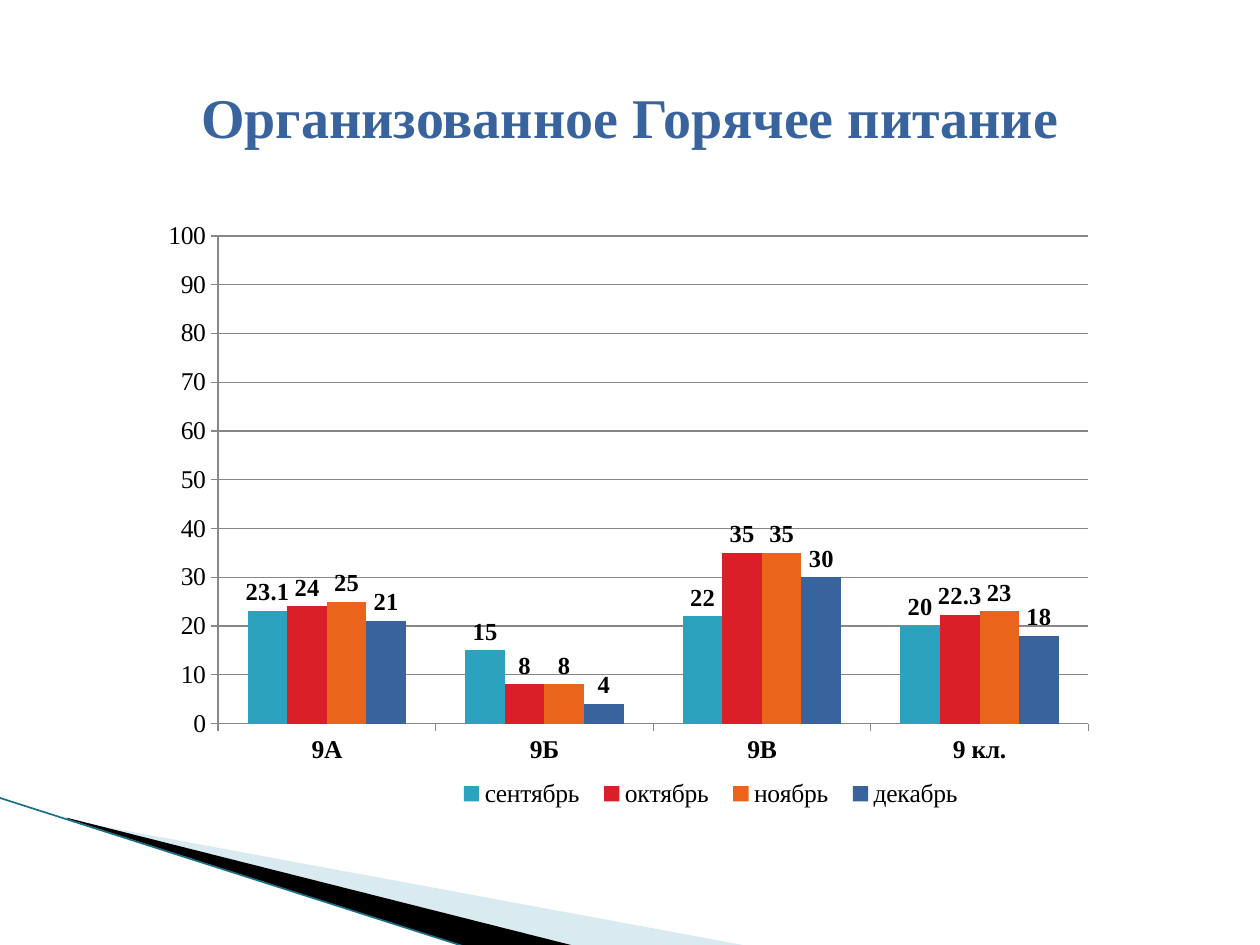
from lxml.etree import SubElement
from pptx import Presentation
from pptx.chart.data import CategoryChartData as ChartData
from pptx.dml.color import RGBColor as RGB
from pptx.enum.chart import XL_CHART_TYPE as Kind, XL_LABEL_POSITION as Spot
from pptx.enum.chart import XL_LEGEND_POSITION as Side, XL_TICK_MARK as Tick
from pptx.enum.shapes import MSO_CONNECTOR as Link
from pptx.enum.text import MSO_ANCHOR as Anchor, PP_ALIGN as Align
from pptx.oxml import parse_xml
from pptx.oxml.ns import nsdecls, qn
from pptx.util import Inches, Pt

TITLE = "Организованное Горячее питание"
CLASSES = ["9А", "9Б", "9В", "9 кл."]
MONTHS = {
    "сентябрь": ([23.1, 15, 22, 20], "2DA2BF"),
    "октябрь": ([24, 8, 35, 22.3], "DA1F28"),
    "ноябрь": ([25, 8, 35, 23], "EB641B"),
    "декабрь": ([21, 4, 30, 18], "39639D"),
}
THEME = {
    "font": "Times New Roman", "title": "39639D", "text": "000000",
    "grid": "878787", "edge": "1B6F84",
    "head": 32, "axis": 14.6, "label": 14,
}
# points, colour, opacity in percent
WEDGES = [
    ([(0.55, 6.51), (5.95, 7.51), (4.56, 7.51), (0.55, 6.5)], "A0CBDC", 40),
    ([(0.53, 6.49), (4.57, 7.51), (3.72, 7.52), (0.54, 6.5)], "000000", 100),
]
EDGE = [(-0.01, 6.33), (3.71, 7.52)]
WIDE, HIGH = 10, 7.5
TITLE_BOX = (0.05, 0.04, 0.9, 1 / 6)
CHART_BOX = (0.12, 0.224, 0.759, 0.645)
PLOT = (0.07, 0.04, 0.91, 0.8)
LEGEND = (0.31, 0.92, 0.55, 0.07)


def place(box):
    """Turn shares of the slide into lengths."""
    return [Inches(part * size) for part, size in zip(box, (WIDE, HIGH) * 2)]


def style(font, size, color="text", bold=False):
    values = {"name": THEME["font"], "size": Pt(size), "bold": bold}
    for key, value in values.items():
        setattr(font, key, value)
    font.color.rgb = RGB.from_string(THEME[color])


def set_layout(node, index, box, inner=False):
    """Fix a chart part at shares of the chart's size."""
    for old in node.findall(qn("c:layout")):
        node.remove(old)
    layout = parse_xml(f"<c:layout {nsdecls('c')}/>")
    manual = SubElement(layout, qn("c:manualLayout"))
    parts = [("layoutTarget", "inner")] if inner else []
    parts += [("xMode", "edge"), ("yMode", "edge")]
    parts += zip("xywh", box)
    for name, value in parts:
        SubElement(manual, qn(f"c:{name}"), val=str(value))
    node.insert(index, layout)


def add_wedge(shapes, points, color, alpha):
    start, *rest = [(Inches(x), Inches(y)) for x, y in points]
    pen = shapes.build_freeform(*start)
    pen.add_line_segments(rest)
    wedge = pen.convert_to_shape()
    wedge.shadow.inherit = False
    wedge.line.fill.background()
    wedge.fill.solid()
    wedge.fill.fore_color.rgb = RGB.from_string(color)
    if alpha < 100:
        tint = wedge.fill._xPr.find(".//" + qn("a:srgbClr"))
        SubElement(tint, qn("a:alpha"), val=str(alpha * 1000))


def add_edge(shapes):
    ends = [Inches(v) for point in EDGE for v in point]
    edge = shapes.add_connector(Link.STRAIGHT, *ends)
    edge.line.width = Pt(0.95)
    edge.line.color.rgb = RGB.from_string(THEME["edge"])
    SubElement(edge._element.spPr, qn("a:effectLst"))


def set_title(title):
    title.left, title.top, title.width, title.height = place(TITLE_BOX)
    frame = title.text_frame
    frame.text = TITLE
    frame.vertical_anchor = Anchor.MIDDLE
    line = frame.paragraphs[0]
    line.alignment = Align.CENTER
    style(line.runs[0].font, THEME["head"], "title", True)


def add_bars(shapes):
    data = ChartData(number_format="General")
    data.categories = CLASSES
    for month, (values, _) in MONTHS.items():
        data.add_series(month, values)
    chart = shapes.add_chart(Kind.COLUMN_CLUSTERED, *place(CHART_BOX), data).chart
    chart.has_title = False
    style(chart.font, THEME["axis"])

    plot = chart.plots[0]
    plot.gap_width, plot.overlap, plot.vary_by_categories = 150, 0, False
    for series, (_, color) in zip(plot.series, MONTHS.values()):
        series.format.fill.solid()
        series.format.fill.fore_color.rgb = RGB.from_string(color)
        labels = series.data_labels
        labels.show_value = True
        labels.position = Spot.OUTSIDE_END
        style(labels.font, THEME["label"], bold=True)

    scale = chart.value_axis
    values = {"minimum_scale": 0, "maximum_scale": 100, "major_unit": 10,
              "has_major_gridlines": True}
    for key, value in values.items():
        setattr(scale, key, value)
    for axis, bold in ((chart.category_axis, True), (scale, False)):
        axis.major_tick_mark = Tick.OUTSIDE
        axis.minor_tick_mark = Tick.NONE
        style(axis.tick_labels.font, THEME["axis"], bold=bold)
    for part in (chart.category_axis, scale, scale.major_gridlines):
        part.format.line.color.rgb = RGB.from_string(THEME["grid"])
        part.format.line.width = Pt(0.75)

    chart.has_legend = True
    legend = chart.legend
    legend.position = Side.BOTTOM
    legend.include_in_layout = False
    style(legend.font, THEME["axis"])
    set_layout(legend._element, 1, LEGEND)
    area = chart._chartSpace.find(".//" + qn("c:plotArea"))
    set_layout(area, 0, PLOT, inner=True)


def main():
    deck = Presentation()
    deck.slide_width, deck.slide_height = Inches(WIDE), Inches(HIGH)
    slide = deck.slides.add_slide(deck.slide_layouts[5])
    for wedge in WEDGES:
        add_wedge(slide.shapes, *wedge)
    add_edge(slide.shapes)
    set_title(slide.shapes.title)
    add_bars(slide.shapes)
    deck.save("out.pptx")


if __name__ == "__main__":
    main()
